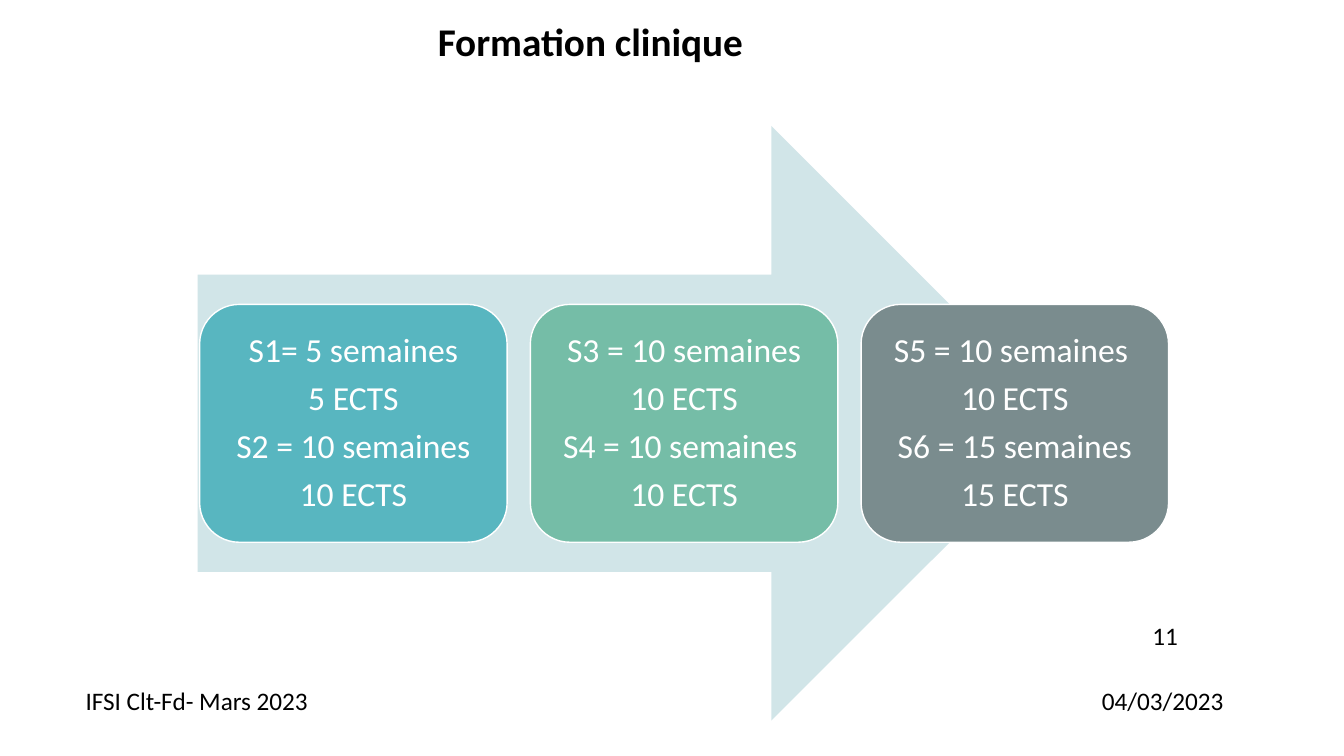
from dataclasses import dataclass

from pptx import Presentation
from pptx.dml.color import RGBColor
from pptx.enum.shapes import MSO_SHAPE
from pptx.enum.text import MSO_ANCHOR, PP_ALIGN
from pptx.util import Inches, Pt


@dataclass(frozen=True)
class Theme:
    font: str = "Calibri"
    ink: str = "000000"
    white: str = "FFFFFF"
    arrow: str = "D1E5E8"
    years: tuple = ("58B6C0", "75BDA7", "7A8C8E")
    title_size: float = 28
    card_size: float = 24
    footer_size: float = 18


class SlideBuilder:
    def __init__(self, slide, theme):
        self.slide = slide
        self.theme = theme

    def shape(self, preset, box, fill, outline=None):
        shape = self.slide.shapes.add_shape(preset, *map(Inches, box))
        shape.shadow.inherit = False
        shape.fill.solid()
        shape.fill.fore_color.rgb = RGBColor.from_string(fill)
        if outline:
            shape.line.color.rgb = RGBColor.from_string(outline)
            shape.line.width = Pt(1)
        else:
            shape.line.fill.background()
        return shape

    def add_lines(self, frame, lines, size, color, bold=False,
                  align=PP_ALIGN.LEFT, spacing=1.0, after=0):
        frame.word_wrap = True
        for index, line in enumerate(lines):
            paragraph = frame.add_paragraph() if index else frame.paragraphs[0]
            paragraph.alignment = align
            paragraph.line_spacing = spacing
            paragraph.space_after = Pt(after)
            run = paragraph.add_run()
            run.text = line
            run.font.name = self.theme.font
            run.font.size = Pt(size)
            run.font.bold = bold
            run.font.color.rgb = RGBColor.from_string(color)

    def text(self, box, line, size, **style):
        frame = self.slide.shapes.add_textbox(*map(Inches, box)).text_frame
        self.add_lines(frame, [line], size, self.theme.ink, **style)

    def card(self, box, lines, fill):
        card = self.shape(MSO_SHAPE.ROUNDED_RECTANGLE, box, fill, self.theme.white)
        frame = card.text_frame
        frame.vertical_anchor = MSO_ANCHOR.MIDDLE
        frame.margin_left = frame.margin_right = Inches(0.1)
        frame.margin_top = frame.margin_bottom = Inches(0.1)
        size = self.theme.card_size
        self.add_lines(frame, lines, size, self.theme.white,
                       align=PP_ALIGN.CENTER, spacing=0.9, after=0.35 * size)


YEARS = (
    ("S1= 5 semaines", "5 ECTS", "S2 = 10 semaines", "10 ECTS"),
    ("S3 = 10 semaines", "10 ECTS", "S4 = 10 semaines ", "10 ECTS"),
    ("S5 = 10 semaines ", "10 ECTS", "S6 = 15 semaines", "15 ECTS"),
)
FOOTER = (
    ((10.83, 6.75, 1.75, 0.4), "04/03/2023"),
    ((11.33, 6.1, 1.25, 0.73), "11"),
    ((0.75, 6.75, 8.25, 0.4), "IFSI Clt-Fd- Mars 2023"),
)
CARD_LEFT, CARD_PITCH = 1.98, 3.28


def main():
    presentation = Presentation()
    presentation.slide_width = Inches(13.33)
    presentation.slide_height = Inches(7.5)
    theme = Theme()
    slide = presentation.slides.add_slide(presentation.slide_layouts[6])
    builder = SlideBuilder(slide, theme)

    # Progress arrow behind the three years
    builder.shape(MSO_SHAPE.RIGHT_ARROW, (1.96, 1.25, 8.64, 5.9), theme.arrow)

    # One card per year of two semesters
    for index, (semesters, fill) in enumerate(zip(YEARS, theme.years)):
        left = CARD_LEFT + index * CARD_PITCH
        builder.card((left, 3.02, 3.05, 2.36), semesters, fill)

    # Date, slide number and footer
    for box, line in FOOTER:
        builder.text(box, line, theme.footer_size)

    # Title
    builder.text((1.19, 0.18, 9.33, 1.65), "Formation clinique", theme.title_size,
                 bold=True, align=PP_ALIGN.CENTER, spacing=0.9)

    presentation.save("out.pptx")


if __name__ == "__main__":
    main()
